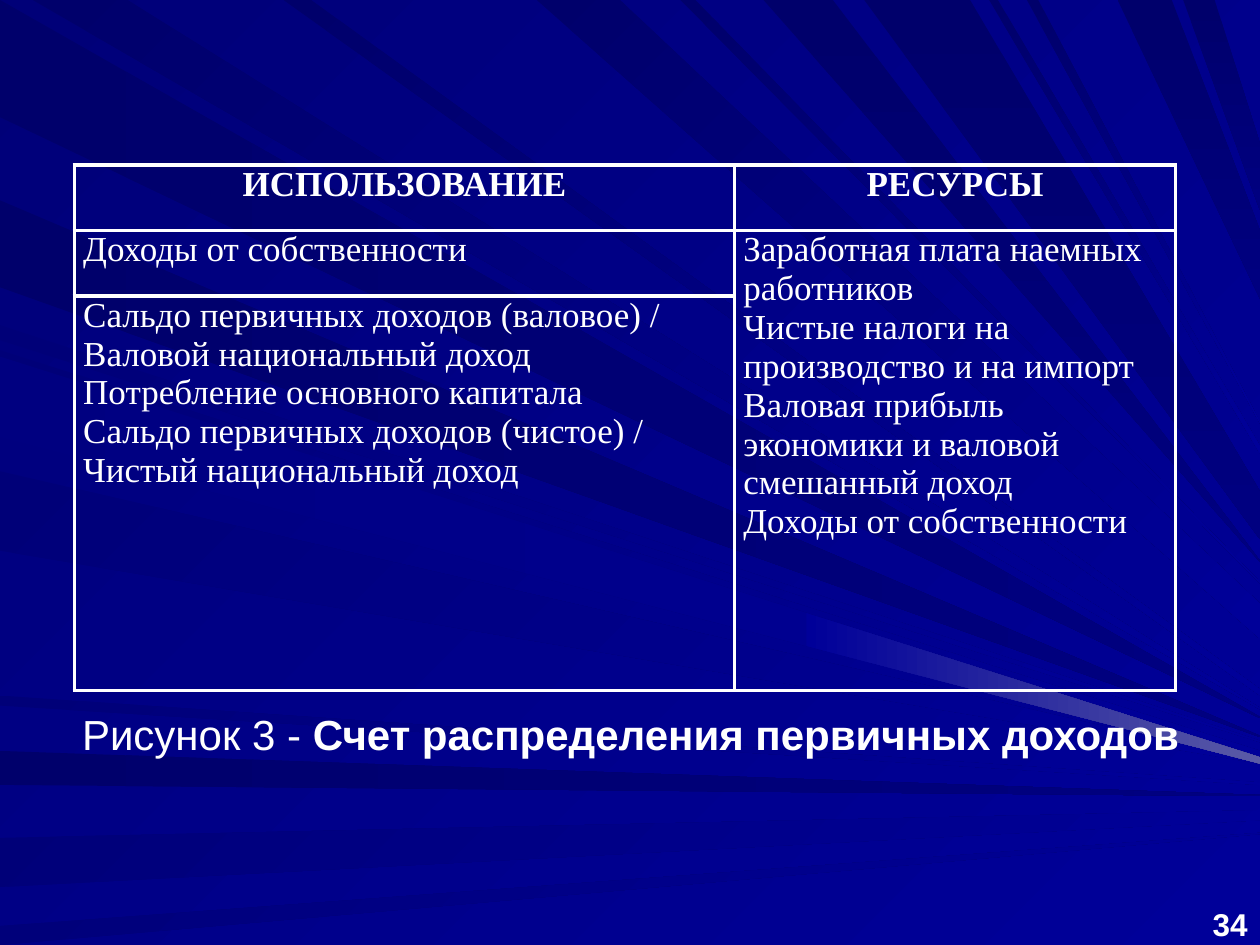
import pptx
import pptx.dml.color
import pptx.enum.text
import pptx.oxml
import pptx.oxml.ns
import pptx.util

RGBColor = pptx.dml.color.RGBColor
Inches, Pt = pptx.util.Inches, pptx.util.Pt
ALIGN, ANCHOR = pptx.enum.text.PP_ALIGN, pptx.enum.text.MSO_ANCHOR

WHITE = RGBColor.from_string("FFFFFF")
NIGHT = RGBColor.from_string("000078")
SHADOW = RGBColor.from_string("00006B")
DEEP = RGBColor.from_string("000080")
BRIGHT = RGBColor.from_string("000099")
HAZE = RGBColor.from_string("5A5AA6")

# Content
CAPTION = [("Рисунок 3 ‑ ", False), ("Счет распределения первичных доходов", True)]
SLIDE_NUMBER = "34"
HEADINGS = ["ИСПОЛЬЗОВАНИЕ", "РЕСУРСЫ"]
USES = [
    ["Доходы от собственности"],
    ["Сальдо первичных доходов (валовое) / Валовой национальный доход",
     "Потребление основного капитала",
     "Сальдо первичных доходов (чистое) / Чистый национальный доход"],
]
RESOURCES = [
    "Заработная плата наемных работников",
    "Чистые налоги на производство и на импорт",
    "Валовая прибыль экономики и валовой смешанный доход",
    "Доходы от собственности",
]
COLUMN_WIDTHS = [5.24, 3.5]
ROW_HEIGHTS = [0.52, 0.52, 3.13]
WIDTH, HEIGHT = 10, 7.5

# Rays run from the left or top edge to the right edge:
# the span where each begins, then the span where it ends, in inches
DARK_LEFT = [(0, 0.93, 5.69, 5.7), (1.59, 2.28, 5.84, 5.85), (5.96, 6.23, 6.31, 6.32)]
BRIGHT_LEFT = [(2.58, 2.7, 5.88, 5.89), (2.78, 3.42, 5.96, 6.02), (3.74, 4.37, 6.05, 6.06),
               (5.52, 5.6, 6.21, 6.23), (6.65, 7.04, 6.43, 6.51), (7.35, 7.5, 6.61, 6.62)]
DARK_TOP = [(6.06, 6.61, 4.45, 4.46), (8.87, 9.3, 1.83, 2.37), (9.39, 9.64, 1.14, 1.67),
            (6.86, 7.7, 3.9, 4.28)]
BRIGHT_TOP = [(0.26, 1.01, 5.62, 5.63), (4.26, 4.92, 4.79, 5.07), (5.4, 5.52, 4.62, 4.63),
              (2.25, 2.47, 5.47, 5.52), (7.85, 7.92, 3.54, 3.6), (8.15, 8.24, 3.35, 3.36)]
GLOW_LEFT = [(2.83, 3.47, 6.01, 6.06)]
GLOW_START = 0.64  # share of its length where the glowing ray turns hazy


def left_ray(near, far, end_near, end_far):
    return [(0, near), (WIDTH, end_near), (WIDTH, end_far), (0, far)]


def top_ray(near, far, end_near, end_far):
    return [(far, 0), (WIDTH, end_near), (WIDTH, end_far), (near, 0)]


def tail_of(corners, share):
    (x1, y1), (x2, y2), (x3, y3), (x4, y4) = corners
    return [(x1 + (x2 - x1) * share, y1 + (y2 - y1) * share), (x2, y2), (x3, y3),
            (x4 + (x3 - x4) * share, y4 + (y3 - y4) * share)]


def paint(fill, start, end, angle):
    fill.gradient()
    fill.gradient_angle = 360 - angle
    for stop, colour in zip(fill.gradient_stops, (start, end)):
        stop.color.rgb = colour


def add_ray(group, corners, start, end, angle):
    points = [(Inches(x), Inches(y)) for x, y in corners]
    builder = group.shapes.build_freeform(*points[0])
    builder.add_line_segments(points[1:], close=True)
    ray = builder.convert_to_shape()
    ray.shadow.inherit = False
    ray.line.fill.background()
    paint(ray.fill, start, end, angle)


def style(font, size, name, bold):
    font.size, font.name, font.bold = Pt(size), name, bold
    font.color.rgb = WHITE


def add_run(paragraph, text, size, name, bold):
    run = paragraph.add_run()
    run.text = text
    style(run.font, size, name, bold)


def place(shape, left, top, width, height):
    shape.left, shape.top = Inches(left), Inches(top)
    shape.width, shape.height = Inches(width), Inches(height)


def fill_cell(cell, lines, heading=False):
    cell.margin_left = cell.margin_right = Inches(0.07)
    cell.margin_top = cell.margin_bottom = 0
    paragraph = cell.text_frame.paragraphs[0]
    paragraph.alignment = ALIGN.CENTER if heading else ALIGN.LEFT
    for index, line in enumerate(lines):
        if index:
            paragraph.add_line_break()
        add_run(paragraph, line, 20, "Times New Roman", heading)
    style(paragraph.font, 20, "Times New Roman", heading)


def outline_cell(cell):
    properties = cell._tc.get_or_add_tcPr()
    for side in ("lnL", "lnR", "lnT", "lnB"):
        properties.append(pptx.oxml.parse_xml(
            f'<a:{side} {pptx.oxml.ns.nsdecls("a")} w="{Pt(2.25)}"><a:solidFill>'
            f'<a:srgbClr val="{WHITE}"/></a:solidFill></a:{side}>'))
    cell.fill.background()


presentation = pptx.Presentation()
presentation.slide_width, presentation.slide_height = Inches(WIDTH), Inches(HEIGHT)
slide = presentation.slides.add_slide(presentation.slide_layouts[5])
paint(slide.background.fill, NIGHT, BRIGHT, 45)

# Rays, behind everything else
rays = slide.shapes.add_group_shape()
for spans, outline, start, end, angle in [
    (DARK_LEFT, left_ray, SHADOW, DEEP, 0),
    (BRIGHT_LEFT, left_ray, NIGHT, BRIGHT, 45),
    (BRIGHT_TOP, top_ray, SHADOW, BRIGHT, 45),
    (DARK_TOP, top_ray, SHADOW, DEEP, 90),
    (GLOW_LEFT, left_ray, DEEP, BRIGHT, 0),
]:
    for span in spans:
        add_ray(rays, outline(*span), start, end, angle)
for span in GLOW_LEFT:
    add_ray(rays, tail_of(left_ray(*span), GLOW_START), BRIGHT, HAZE, 0)
slide.shapes._spTree.insert(2, rays._element)

# Slide number
number = slide.shapes.add_textbox(0, 0, 0, 0)
place(number, 9.49, 7.14, 0.51, 0.39)
number.text_frame.word_wrap = True
number.text_frame.vertical_anchor = ANCHOR.BOTTOM
paragraph = number.text_frame.paragraphs[0]
paragraph.alignment = ALIGN.RIGHT
add_run(paragraph, SLIDE_NUMBER, 18, "Arial", True)

# Caption under the table
caption = slide.shapes.title
place(caption, 0.2, 5.49, 9.61, 0.59)
caption.text_frame.auto_size = pptx.enum.text.MSO_AUTO_SIZE.SHAPE_TO_FIT_TEXT
caption.text_frame.vertical_anchor = ANCHOR.TOP
paragraph = caption.text_frame.paragraphs[0]
paragraph.alignment = ALIGN.CENTER
paragraph.line_spacing = 1.2
paragraph.space_after = Pt(12)
for text, bold in CAPTION:
    add_run(paragraph, text, 24, "Arial", bold)

# Account table
frame = slide.shapes.add_table(len(ROW_HEIGHTS), len(COLUMN_WIDTHS), Inches(0.59), Inches(1.31),
                               Inches(sum(COLUMN_WIDTHS)), Inches(sum(ROW_HEIGHTS)))
table = frame.table
table.first_row = table.horz_banding = False
for column, width in zip(table.columns, COLUMN_WIDTHS):
    column.width = Inches(width)
for row, height in zip(table.rows, ROW_HEIGHTS):
    row.height = Inches(height)
for cell in table.iter_cells():
    outline_cell(cell)
table.cell(1, 1).merge(table.cell(2, 1))
for index, heading in enumerate(HEADINGS):
    fill_cell(table.cell(0, index), [heading], heading=True)
for index, lines in enumerate(USES, start=1):
    fill_cell(table.cell(index, 0), lines)
fill_cell(table.cell(1, 1), RESOURCES)

presentation.save("out.pptx")
